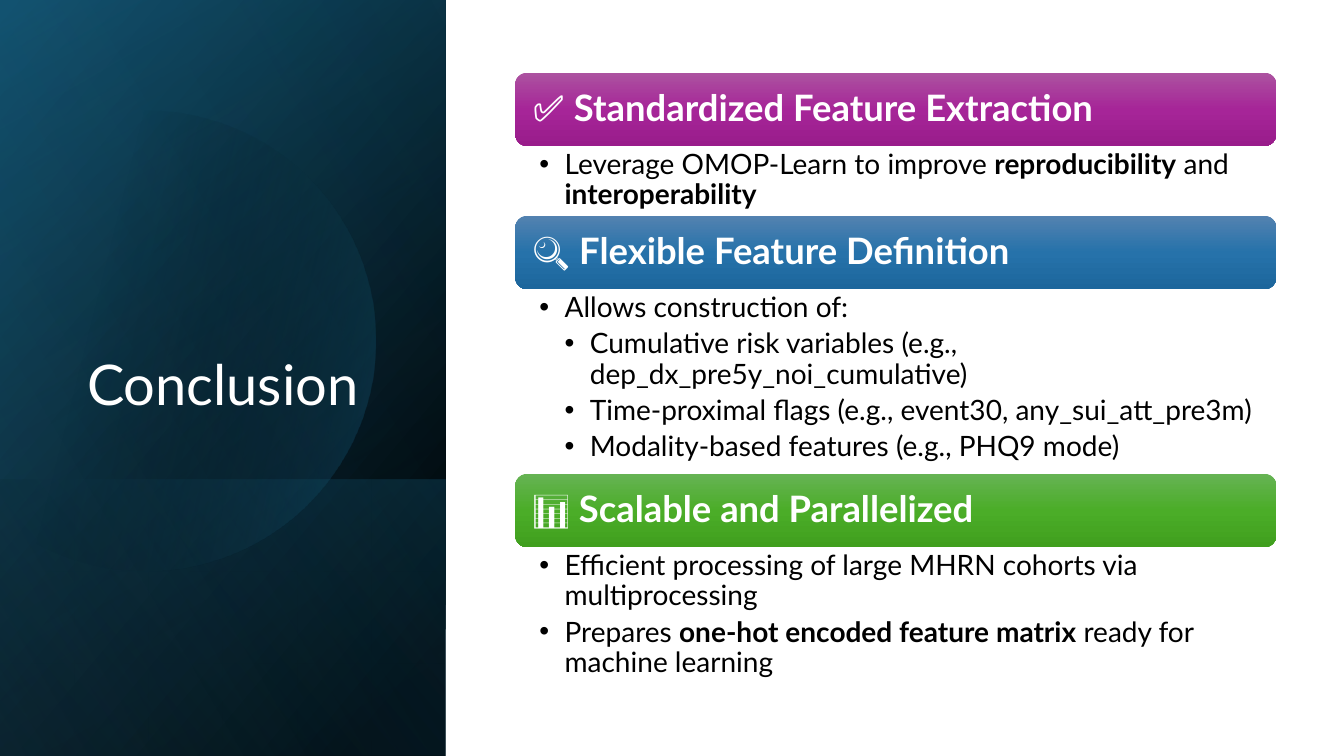
from math import cos, radians, sin
from lxml import etree
from pptx import Presentation
from pptx.dml.color import RGBColor
from pptx.enum.shapes import MSO_SHAPE
from pptx.enum.text import MSO_ANCHOR, PP_ALIGN
from pptx.oxml.ns import qn
from pptx.util import Inches, Pt

RECT, ROUND = MSO_SHAPE.RECTANGLE, MSO_SHAPE.ROUNDED_RECTANGLE
TOP, MIDDLE, BOTTOM = MSO_ANCHOR.TOP, MSO_ANCHOR.MIDDLE, MSO_ANCHOR.BOTTOM
LEFT, CENTER = PP_ALIGN.LEFT, PP_ALIGN.CENTER

# Content: ** switches bold on and off
TITLE = "Conclusion"
SECTIONS = [
    ("✅ **Standardized Feature Extraction", "purple", 0.69, [
        (1, "Leverage OMOP-Learn to improve **reproducibility** and **interoperability"),
    ]),
    ("🔍 **Flexible Feature Definition", "blue", 1.83, [
        (1, "Allows construction of:"),
        (2, "Cumulative risk variables (e.g., dep_dx_pre5y_noi_cumulative)"),
        (2, "Time-proximal flags (e.g., event30, any_sui_att_pre3m)"),
        (2, "Modality-based features (e.g., PHQ9 mode)"),
    ]),
    ("📊 **Scalable and Parallelized", "green", 1.38, [
        (1, "Efficient processing of large MHRN cohorts via multiprocessing"),
        (1, "Prepares **one-hot encoded feature matrix** ready for machine learning"),
    ]),
]

# Theme: gradient stops are (position, colour, opacity)
THEME = {
    "font": "Lato", "white": "FFFFFF", "black": "000000",
    "title": 40, "head": 26, "body": 20,
    "purple": [(0, "AC53A0", 100), (50, "A62598", 100), (100, "991C8B", 100)],
    "blue": [(0, "5382B0", 100), (50, "2672AA", 100), (100, "1C669C", 100)],
    "green": [(0, "66B354", 100), (50, "4BAD28", 100), (100, "409F1E", 100)],
    "deep": [(8, "000000", 100), (100, "104862", 100)],
    "glow": [(0, "000000", 0), (99, "156082", 46)],
    "foot": [(2, "156082", 29), (100, "000000", 30)],
    "disc": [(29, "000000", 0), (100, "156082", 43)],
    "sheen": [(0, "000000", 0), (99, "46B1E1", 11)],
}

# Layout
WIDE, HIGH = 13.33, 7.5
PANEL = 4.42
FULL, LOW = (0, HIGH), (4.76, 2.74)  # top and height of a panel layer
UNDER = [("deep", 50, FULL), ("glow", 30, FULL), ("foot", 130, LOW)]
OVER = [("sheen", 120, FULL)]
DISC = (1.44, 3.38, 2.28)  # centre and radius
LIST_X, LIST_Y, LIST_W, HEAD_H = 5.11, 0.72, 7.55, 0.73
STEP = 0.25

deck = Presentation()
deck.slide_width, deck.slide_height = Inches(WIDE), Inches(HIGH)
slide = deck.slides.add_slide(deck.slide_layouts[6])
shapes = slide.shapes


def shade(shape, stops, angle):
    """Give a shape a linear gradient and no line or shadow."""
    shape.shadow.inherit = False
    shape.line.fill.background()
    shape.fill.gradient()
    shape.fill.gradient_angle = (360 - angle) % 360
    items = shape._element.spPr.find(".//" + qn("a:gsLst"))
    for old in list(items):
        items.remove(old)
    for place, color, alpha in stops:
        stop = etree.SubElement(items, qn("a:gs"), pos=str(place * 1000))
        tint = etree.SubElement(stop, qn("a:srgbClr"), val=color)
        if alpha < 100:
            etree.SubElement(tint, qn("a:alpha"), val=str(alpha * 1000))


def layer(name, angle, span):
    """Add a mirrored, quarter-turned block to the side panel."""
    top, tall = span
    box = (PANEL - tall) / 2, top + (tall - PANEL) / 2, tall, PANEL
    block = shapes.add_shape(RECT, *map(Inches, box))
    block.rotation = 90
    block._element.spPr.find(qn("a:xfrm")).set("flipH", "1")
    shade(block, THEME[name], angle)


def frame(shape, anchor, pads):
    """Set up wrapping, anchor and margins."""
    text = shape.text_frame
    form = {"word_wrap": True, "vertical_anchor": anchor}
    sides = "margin_left", "margin_top", "margin_right", "margin_bottom"
    form.update(zip(sides, map(Inches, pads)))
    for key, value in form.items():
        setattr(text, key, value)
    return text


def write(para, words, size, color, align=LEFT, after=0):
    """Fill a paragraph, toggling bold at each ** mark."""
    form = {"alignment": align, "line_spacing": 0.9, "space_after": Pt(after)}
    for key, value in form.items():
        setattr(para, key, value)
    for i, part in enumerate(words.split("**")):
        run = para.add_run()
        run.text = part
        look = {"name": THEME["font"], "size": Pt(THEME[size]), "bold": i % 2 == 1}
        for key, value in look.items():
            setattr(run.font, key, value)
        run.font.color.rgb = RGBColor.from_string(THEME[color])


def bullet(para, level):
    """Add a hanging bullet."""
    props = para._p.get_or_add_pPr()
    props.set("marL", str(Inches(STEP * level)))
    props.set("indent", str(-Inches(STEP)))
    etree.SubElement(props, qn("a:buFont"), typeface="Arial")
    etree.SubElement(props, qn("a:buChar"), char="•")


# Side panel with a disc cut at the slide edge
for item in UNDER:
    layer(*item)
mid_x, mid_y, radius = DISC
rim = [(Inches(mid_x + radius * cos(radians(a))), Inches(mid_y + radius * sin(radians(a))))
       for a in range(-129, 130, 2)]
path = shapes.build_freeform(*rim[0])
path.add_line_segments(rim[1:], close=True)
shade(path.convert_to_shape(), THEME["disc"], 14)
for item in OVER:
    layer(*item)

# Title
box = shapes.add_textbox(*map(Inches, (0.64, 3.4, 3.14, 0.79)))
text = frame(box, BOTTOM, (0.1, 0.05, 0.1, 0.05))
write(text.paragraphs[0], TITLE, "title", "white", CENTER)

# Sections: a coloured bar over its bullets
y = LIST_Y
for head, hue, tall, lines in SECTIONS:
    bar = shapes.add_shape(ROUND, *map(Inches, (LIST_X, y, LIST_W, HEAD_H)))
    shade(bar, THEME[hue], 90)
    text = frame(bar, MIDDLE, (0.14,) * 4)
    write(text.paragraphs[0], head, "head", "white")
    y += HEAD_H
    box = shapes.add_textbox(*map(Inches, (LIST_X, y, LIST_W, tall)))
    text = frame(box, TOP, (0.24, 0.04, 0.2, 0.04))
    for i, (level, words) in enumerate(lines):
        para = text.add_paragraph() if i else text.paragraphs[0]
        write(para, words, "body", "black", after=4.3)
        bullet(para, level)
    y += tall

deck.save("out.pptx")
